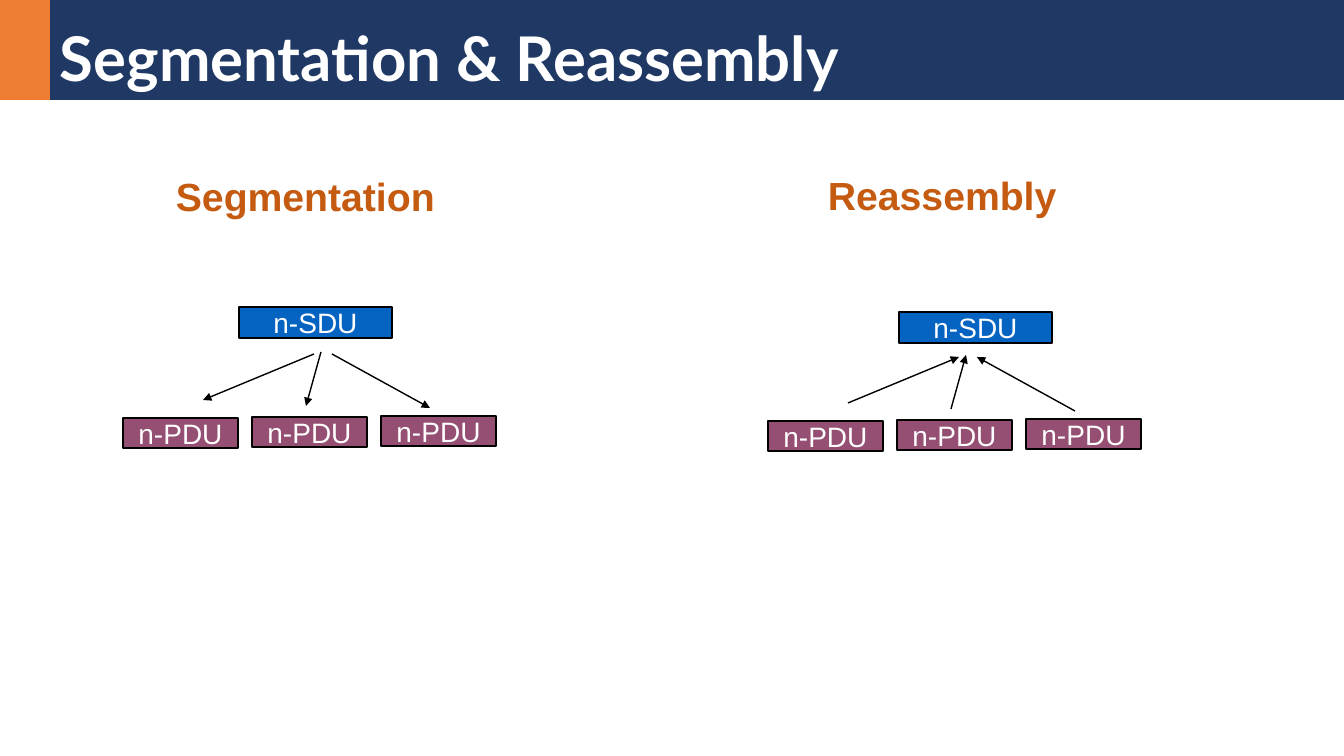
import pptx
import pptx.util
import pptx.dml.color
import pptx.enum.shapes
import pptx.enum.text
import pptx.oxml.ns
import lxml.etree

RGB = pptx.dml.color.RGBColor
WHITE = RGB(0xFF, 0xFF, 0xFF)
BLACK = RGB(0, 0, 0)
ORANGE = RGB(0xED, 0x7D, 0x31)
NAVY = RGB(0x20, 0x38, 0x64)
RUST = RGB(0xC5, 0x5A, 0x11)
BLUE = RGB(0x05, 0x63, 0xC1)
PLUM = RGB(0x95, 0x4F, 0x72)

TITLE = "Segmentation & Reassembly"
PANELS = [
    {"head": "Segmentation", "area": (166, 167, 282, 57),
     "sdu": (239, 307), "pdu": (123, 418), "tip": "a:tailEnd"},
    {"head": "Reassembly", "area": (818, 166, 252, 57),
     "sdu": (899, 312), "pdu": (768, 421), "tip": "a:headEnd"},
]
ARROWS = [(191, -64, 80, -18), (198, -66, 183, -12), (209, -64, 307, -10)]
COUNT, STEP = 3, 129
SDU_SIZE = (153, 31)
PDU_SIZE = (115, 30)

ANCHOR = pptx.enum.text.MSO_ANCHOR
ALIGN = pptx.enum.text.PP_ALIGN


def px(num):
    return pptx.util.Emu(round(num * 914400 / 100.8))


def write(frame, text, size, font, color, bold=False):
    para = frame.paragraphs[0]
    run = para.add_run()
    run.text = text
    run.font.size = pptx.util.Pt(size)
    run.font.name = font
    run.font.bold = bold
    run.font.color.rgb = color
    return para


def add_box(slide, area, fill, edge=False):
    box = slide.shapes.add_shape(
        pptx.enum.shapes.MSO_SHAPE.RECTANGLE, *map(px, area))
    box.shadow.inherit = False
    box.fill.solid()
    box.fill.fore_color.rgb = fill
    if edge:
        box.line.color.rgb = BLACK
        box.line.width = pptx.util.Pt(1)
    else:
        box.line.fill.background()
    return box


def add_unit(slide, area, fill, text):
    frame = add_box(slide, area, fill, True).text_frame
    frame.margin_left = frame.margin_right = 0
    frame.margin_top = frame.margin_bottom = 0
    frame.vertical_anchor = ANCHOR.MIDDLE
    frame.word_wrap = False
    write(frame, text, 20, "Arial", WHITE).alignment = ALIGN.CENTER


def add_arrow(slide, ends, tip):
    line = slide.shapes.add_connector(
        pptx.enum.shapes.MSO_CONNECTOR.STRAIGHT, *map(px, ends))
    line.line.color.rgb = BLACK
    line.line.width = pptx.util.Pt(1)
    qn = pptx.oxml.ns.qn
    props = line._element.spPr
    lxml.etree.SubElement(props.find(qn("a:ln")), qn(tip), type="triangle")
    lxml.etree.SubElement(props, qn("a:effectLst"))


def add_title(slide):
    add_box(slide, (0, 0, 50, 100), ORANGE)
    frame = add_box(slide, (50, 0, 1294, 100), NAVY).text_frame
    frame.vertical_anchor = ANCHOR.BOTTOM
    frame.word_wrap = True
    para = write(frame, TITLE, 44, "Lato", WHITE, True)
    para.alignment = ALIGN.LEFT
    para.line_spacing = 0.9


def add_panel(slide, panel):
    head = slide.shapes.add_textbox(*map(px, panel["area"])).text_frame
    head.word_wrap = False
    write(head, panel["head"], 28, "Arial", RUST, True)
    add_unit(slide, panel["sdu"] + SDU_SIZE, BLUE, "n-SDU")
    left, top = panel["pdu"]
    for i in range(COUNT):
        add_unit(slide, (left + i * STEP, top - i) + PDU_SIZE, PLUM, "n-PDU")
    for x1, y1, x2, y2 in ARROWS:
        ends = (left + x1, top + y1, left + x2, top + y2)
        add_arrow(slide, ends, panel["tip"])


def main():
    deck = pptx.Presentation()
    deck.slide_width, deck.slide_height = px(1344), px(756)
    slide = deck.slides.add_slide(deck.slide_layouts[6])
    add_title(slide)
    for panel in PANELS:
        add_panel(slide, panel)
    deck.save("out.pptx")


if __name__ == "__main__":
    main()
